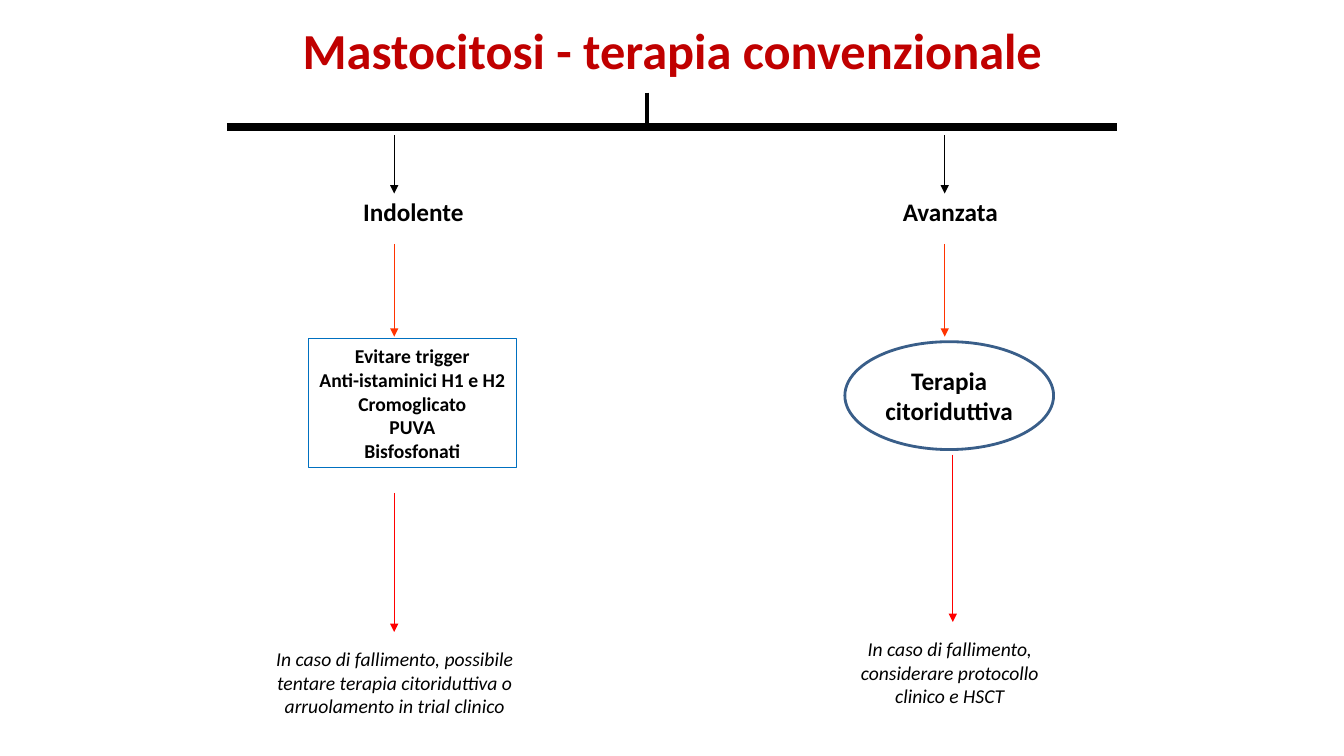
from pptx import Presentation
from pptx.dml.color import RGBColor
from pptx.enum.shapes import MSO_CONNECTOR, MSO_SHAPE
from pptx.enum.text import MSO_ANCHOR, PP_ALIGN
from pptx.oxml.ns import qn
from pptx.util import Inches, Pt
from lxml.etree import SubElement

# Content
TITLE = "Mastocitosi - terapia convenzionale"
HEADINGS = [  # text, box
    ("Indolente", (3.5, 1.9, 1.2, 0.4)),
    ("Avanzata", (8.77, 1.9, 1.31, 0.4)),
]
TREATMENTS = [  # preset, lines, box, line colour, line width, text size, margin
    (MSO_SHAPE.RECTANGLE,
     ["Evitare trigger", "Anti-istaminici H1 e H2", "Cromoglicato", "PUVA", "Bisfosfonati"],
     (3.06, 3.36, 2.06, 1.28), "box", 0.75, 14, 0.05),
    (MSO_SHAPE.OVAL, ["Terapia citoriduttiva"],
     (8.38, 3.39, 2.07, 1.07), "oval", 2, 18, 0),
]
FAILURES = [
    ("In caso di fallimento, possibile tentare terapia citoriduttiva o "
     "arruolamento in trial clinico", (2.63, 6.37, 2.57, 0.81)),
    ("In caso di fallimento, considerare protocollo clinico e HSCT",
     (8.34, 6.27, 2.16, 0.81)),
]
BRANCHES = [3.91, 9.37]  # x of the two columns of arrows
FAILURE_ARROWS = [(3.91, 4.89, 6.27), (9.45, 4.51, 6.17)]  # x, top, bottom
COLORS = {"title": "C00000", "text": "000000", "box": "0070C0", "oval": "395E89",
          "treat": "FF3300", "fail": "FF0000"}
FONT = "Calibri"


def color(name):
    return RGBColor.from_string(COLORS[name])


def place(shape, box):
    shape.left, shape.top, shape.width, shape.height = map(Inches, box)


def write(frame, lines, size, bold=False, italic=False, ink="text"):
    frame.text = "\n".join(lines)
    for paragraph in frame.paragraphs:
        paragraph.alignment = PP_ALIGN.CENTER
        font = paragraph.font
        font.name, font.size = FONT, Pt(size)
        font.bold, font.italic = bold, italic
        font.color.rgb = color(ink)


def add_line(x1, y1, x2, y2, ink="text", width=0.75, arrow=False):
    line = slide.shapes.add_connector(
        MSO_CONNECTOR.STRAIGHT, *map(Inches, (x1, y1, x2, y2)))
    line.line.color.rgb = color(ink)
    line.line.width = Pt(width)
    if arrow:
        SubElement(line.line._get_or_add_ln(), qn("a:tailEnd"), type="triangle")
    SubElement(line._element.spPr, qn("a:effectLst"))


prs = Presentation()
prs.slide_width, prs.slide_height = Inches(13.33), Inches(7.5)
slide = prs.slides.add_slide(prs.slide_layouts[5])

# Title
title = slide.shapes.title
place(title, (2.22, 0.13, 8.9, 0.71))
write(title.text_frame, [TITLE], 36, bold=True, ink="title")

# Fork under the title
add_line(2.25, 1.26, 11.08, 1.26, width=6)
add_line(6.42, 0.92, 6.42, 1.26, width=3)

# Arrows of both branches
for x in BRANCHES:
    add_line(x, 1.34, x, 1.92, arrow=True)
    add_line(x, 2.42, x, 3.34, "treat", arrow=True)
for x, top, bottom in FAILURE_ARROWS:
    add_line(x, top, x, bottom, "fail", arrow=True)

# Disease forms
for text, box in HEADINGS:
    heading = slide.shapes.add_textbox(*map(Inches, box))
    heading.text_frame.word_wrap = False
    write(heading.text_frame, [text], 18, bold=True)

# Treatments
for preset, lines, box, ink, width, size, margin in TREATMENTS:
    treatment = slide.shapes.add_shape(preset, *map(Inches, box))
    treatment.shadow.inherit = False
    treatment.fill.background()
    treatment.line.color.rgb = color(ink)
    treatment.line.width = Pt(width)
    frame = treatment.text_frame
    frame.word_wrap = True
    frame.vertical_anchor = MSO_ANCHOR.MIDDLE
    frame.margin_left = frame.margin_right = Inches(margin)
    write(frame, lines, size, bold=True)

# What to do on failure
for text, box in FAILURES:
    failure = slide.shapes.add_textbox(*map(Inches, box))
    failure.text_frame.word_wrap = True
    write(failure.text_frame, [text], 14, italic=True)

prs.save("out.pptx")
